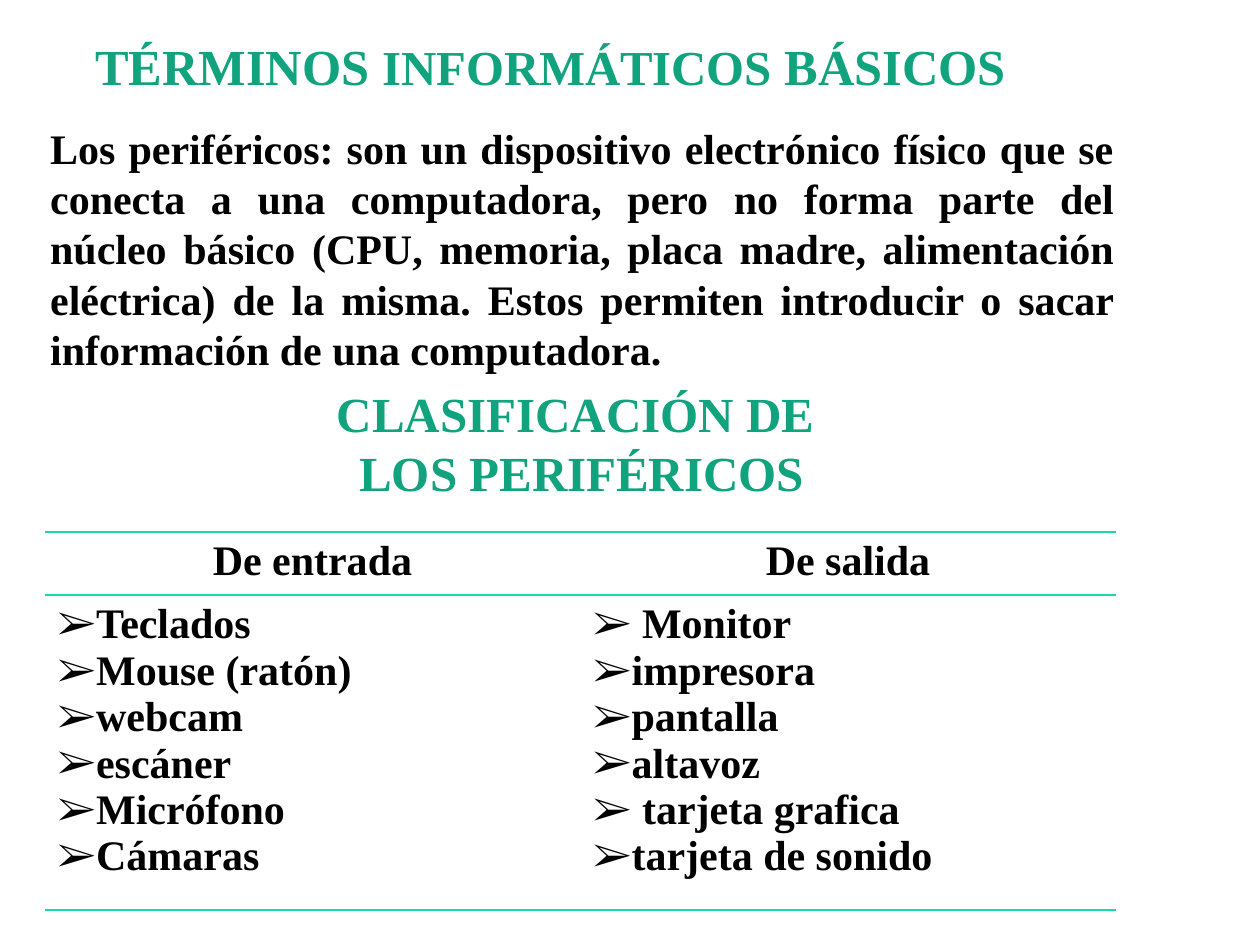
from dataclasses import dataclass
from typing import Any

import lxml.etree
import pptx
import pptx.dml.color
import pptx.enum.text
import pptx.oxml
import pptx.oxml.ns
import pptx.util

ALIGN = pptx.enum.text.PP_ALIGN
ANCHOR = pptx.enum.text.MSO_ANCHOR
qn = pptx.oxml.ns.qn


@dataclass(frozen=True)
class Theme:
    """Colours, font, type sizes and table style of the slide."""
    font: str = "Times New Roman"
    heading: str = "10A37D"
    outline: str = "017658"
    body: str = "000000"
    rule: str = "16DAA7"
    title_size: float = 28.8
    title_small: float = 27.9
    subtitle_size: float = 28
    body_size: float = 24
    bullet: str = "➢"
    plain_table: str = "{2D5ABB26-0587-4C30-8999-92F81FD0307C}"


@dataclass(frozen=True)
class Box:
    """A rectangle in percent of the slide's width and height."""
    left: float
    top: float
    width: float
    height: float


@dataclass(frozen=True)
class Span:
    """A run of text with its size."""
    text: str
    size: float


@dataclass(frozen=True)
class TextBlock:
    """A text box with its paragraphs and frame format."""
    box: Box
    paragraphs: list[list[Span]]
    color: str
    align: Any
    frame: dict[str, Any]
    outlined: bool = False
    indent: float = 0


@dataclass(frozen=True)
class Column:
    """A table column with a heading and its devices."""
    heading: str
    devices: list[str]


T = Theme()
HEADING_FRAME = {
    "vertical_anchor": ANCHOR.BOTTOM,
    "margin_left": pptx.util.Inches(0.05),
    "margin_right": pptx.util.Inches(0.05),
    "margin_top": 0,
    "margin_bottom": 0,
}
DEFINITION = (
    "Los periféricos: son un dispositivo electrónico físico que se conecta a una "
    "computadora, pero no forma parte del núcleo básico (CPU, memoria, placa madre, "
    "alimentación eléctrica) de la misma. Estos permiten introducir o sacar "
    "información de una computadora."
)
BLOCKS = [
    TextBlock(
        Box(6.7, 2.8, 74, 7.33),
        [[Span("TÉRMINOS ", T.title_size), Span("INFORMÁTICOS", T.title_small),
          Span(" BÁSICOS", T.title_size)]],
        T.heading, ALIGN.CENTER, HEADING_FRAME, outlined=True),
    TextBlock(
        Box(0, 12.27, 89.4, 27.33), [[Span(DEFINITION, T.body_size)]],
        T.body, ALIGN.JUSTIFY, {"vertical_anchor": ANCHOR.TOP}, indent=0.3),
    TextBlock(
        Box(4.33, 45.87, 82.7, 7.2),
        [[Span("CLASIFICACIÓN DE", T.subtitle_size)],
         [Span(" LOS PERIFÉRICOS", T.subtitle_size)]],
        T.heading, ALIGN.CENTER, HEADING_FRAME, outlined=True),
]
TABLE_BOX = Box(3.55, 56.3, 85, 33.6)
ROW_SHARES = (1 / 6, 5 / 6)
COLUMNS = [
    Column("De entrada", ["Teclados", "Mouse (ratón)", "webcam", "escáner",
                          "Micrófono", "Cámaras"]),
    Column("De salida", [" Monitor", "impresora", "pantalla", "altavoz",
                         " tarjeta grafica", "tarjeta de sonido"]),
]


def apply(target: Any, values: dict[str, Any]) -> None:
    """Set every named attribute of the target."""
    for name, value in values.items():
        setattr(target, name, value)


def place(prs: Any, box: Box) -> tuple[int, int, int, int]:
    """Turn slide shares into lengths."""
    w, h = prs.slide_width / 100, prs.slide_height / 100
    return int(box.left * w), int(box.top * h), int(box.width * w), int(box.height * h)


def add_line(parent: Any, tag: str, width: float, color: str | None) -> Any:
    """Append a line element, empty when it has no colour."""
    ln = lxml.etree.SubElement(parent, qn(tag), w=str(int(pptx.util.Pt(width))))
    if color is None:
        lxml.etree.SubElement(ln, qn("a:noFill"))
    else:
        fill = lxml.etree.SubElement(ln, qn("a:solidFill"))
        lxml.etree.SubElement(fill, qn("a:srgbClr"), val=color)
    return ln


def add_run(p: Any, span: Span, color: str, outlined: bool = False) -> None:
    """Add a bold run in the theme's font."""
    r = p.add_run()
    r.text = span.text
    apply(r.font, {"name": T.font, "size": pptx.util.Pt(span.size), "bold": True})
    r.font.color.rgb = pptx.dml.color.RGBColor.from_string(color)
    if outlined:
        props = r._r.get_or_add_rPr()
        props.insert(0, add_line(props, "a:ln", 0.04, T.outline))


def add_bullet(p: Any) -> None:
    """Give a paragraph the theme's bullet."""
    props = p._p.get_or_add_pPr()
    lxml.etree.SubElement(props, qn("a:buFont"), typeface=T.font)
    lxml.etree.SubElement(props, qn("a:buChar"), char=T.bullet)


def add_paragraph(tf: Any, index: int) -> Any:
    """Return the first paragraph or a new one."""
    return tf.add_paragraph() if index else tf.paragraphs[0]


def add_text(prs: Any, s: Any, block: TextBlock) -> None:
    """Draw a text block."""
    tf = s.shapes.add_textbox(*place(prs, block.box)).text_frame
    apply(tf, {"word_wrap": True, **block.frame})
    for i, spans in enumerate(block.paragraphs):
        p = add_paragraph(tf, i)
        p.alignment = block.align
        if block.indent:
            p._p.get_or_add_pPr().set("marL", str(int(pptx.util.Inches(block.indent))))
        for span in spans:
            add_run(p, span, block.color, block.outlined)


def fill_cell(cell: Any, lines: list[str], align: Any, bulleted: bool) -> None:
    """Write a cell's lines and draw its horizontal rules."""
    cell.fill.background()
    props = cell._tc.get_or_add_tcPr()
    sides = {"a:lnL": None, "a:lnR": None, "a:lnT": T.rule, "a:lnB": T.rule}
    for i, (tag, color) in enumerate(sides.items()):
        props.insert(i, add_line(props, tag, 1, color))
    for i, line in enumerate(lines):
        p = add_paragraph(cell.text_frame, i)
        p.alignment = align
        if bulleted:
            add_bullet(p)
        add_run(p, Span(line, T.body_size), T.body)


def add_devices(prs: Any, s: Any, columns: list[Column]) -> None:
    """Draw the table of input and output devices."""
    left, top, width, height = place(prs, TABLE_BOX)
    table = s.shapes.add_table(len(ROW_SHARES), len(columns), left, top, width, height).table
    apply(table, {"first_row": False, "horz_banding": False})
    table._tbl.tblPr.find(qn("a:tableStyleId")).text = T.plain_table
    for row, share in zip(table.rows, ROW_SHARES):
        row.height = int(height * share)
    for i, column in enumerate(columns):
        fill_cell(table.cell(0, i), [column.heading], ALIGN.CENTER, False)
        fill_cell(table.cell(1, i), column.devices, ALIGN.JUSTIFY, True)


def main() -> None:
    """Build and save the slide."""
    prs = pptx.Presentation()
    apply(prs, {"slide_width": pptx.util.Inches(10), "slide_height": pptx.util.Inches(7.5)})
    s = prs.slides.add_slide(prs.slide_layouts[6])
    for block in BLOCKS:
        add_text(prs, s, block)
    add_devices(prs, s, COLUMNS)
    prs.save("out.pptx")


if __name__ == "__main__":
    main()
